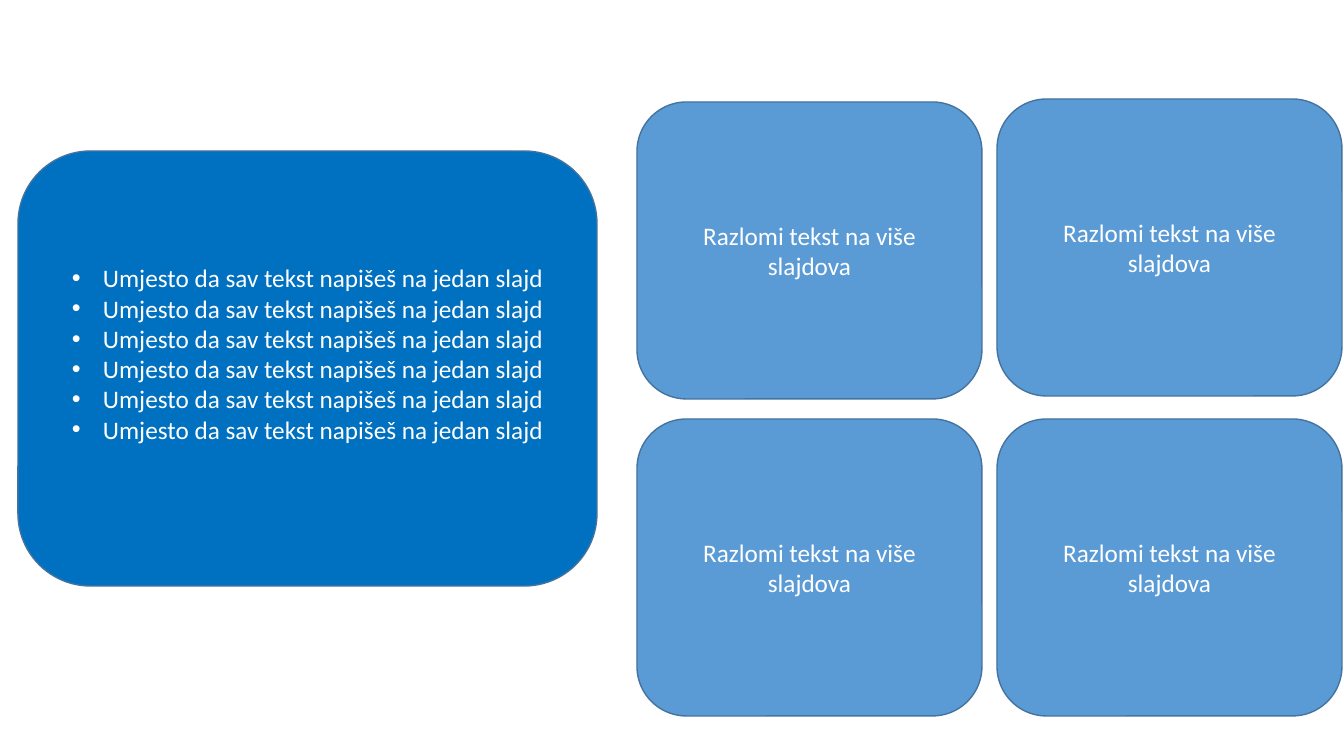
from lxml import etree
from pptx import Presentation
from pptx.dml.color import RGBColor
from pptx.enum.shapes import MSO_SHAPE
from pptx.enum.text import MSO_ANCHOR, PP_ALIGN
from pptx.oxml.ns import qn
from pptx.util import Emu, Pt

ROUNDED = MSO_SHAPE.ROUNDED_RECTANGLE
MIDDLE = MSO_ANCHOR.MIDDLE
CENTER = PP_ALIGN.CENTER

SLIDE_W, SLIDE_H = 1344, 756
EMU_PER_PX = 12192000 / SLIDE_W
FONT = "Calibri"
WHITE, BLUE, LIGHT_BLUE, OUTLINE = "FFFFFF", "0070C0", "5B9BD5", "43739E"

LONG_TEXT = "Umjesto da sav tekst napišeš na jedan slajd"
SHORT_TEXT = "Razlomi tekst na više slajdova"


def px(n):
    return Emu(round(n * EMU_PER_PX))


def color(hex_string):
    return RGBColor.from_string(hex_string)


def add_bullet(p, indent):
    pPr = p._p.get_or_add_pPr()
    pPr.set("marL", str(px(indent)))
    pPr.set("indent", str(-px(indent)))
    etree.SubElement(pPr, qn("a:buFont")).set("typeface", "Arial")
    etree.SubElement(pPr, qn("a:buChar")).set("char", "•")


def add_card(slide, box, fill, lines):
    """Draw a rounded card with one centred paragraph per line."""
    sp = slide.shapes.add_shape(ROUNDED, *map(px, box))
    sp.shadow.inherit = False
    sp.fill.solid()
    sp.fill.fore_color.rgb = color(fill)
    sp.line.color.rgb = color(OUTLINE)
    sp.line.width = Pt(1)
    tf = sp.text_frame
    tf.word_wrap = True
    tf.vertical_anchor = MIDDLE
    for i, line in enumerate(lines):
        p = tf.add_paragraph() if i else tf.paragraphs[0]
        p.alignment = CENTER
        r = p.add_run()
        r.text = line
        r.font.name = FONT
        r.font.size = Pt(18)
        r.font.color.rgb = color(WHITE)
    return tf


def add_crowded_card(slide, box):
    tf = add_card(slide, box, BLUE, [LONG_TEXT] * 6)
    tf.margin_bottom = px(35)
    for p in tf.paragraphs:
        add_bullet(p, 31)


def add_split_cards(slide, box):
    """Fill the box with two columns of two cards; the left one starts lower."""
    left, top, width, height = box
    card_w, card_h = 345, 297
    right, bottom = left + width - card_w, top + height - card_h
    for x, y in ((left, top + 3), (right, top), (left, bottom), (right, bottom)):
        add_card(slide, (x, y, card_w, card_h), LIGHT_BLUE, [SHORT_TEXT])


def main():
    prs = Presentation()
    prs.slide_width, prs.slide_height = px(SLIDE_W), px(SLIDE_H)
    slide = prs.slides.add_slide(prs.slide_layouts.get_by_name("Blank"))
    add_crowded_card(slide, (18, 151, 579, 435))
    add_split_cards(slide, (637, 99, 705, 617))
    prs.save("out.pptx")


if __name__ == "__main__":
    main()
